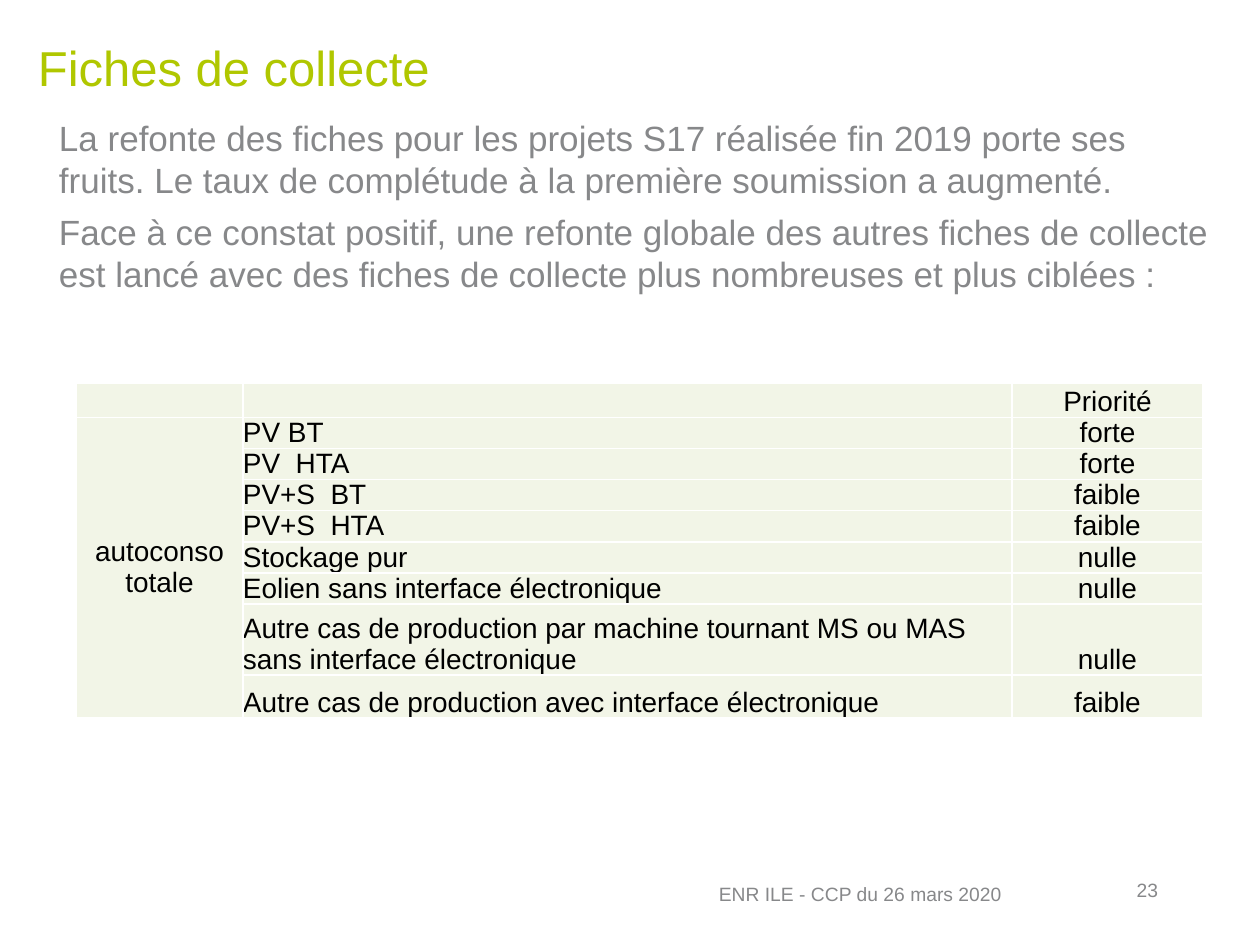
from dataclasses import dataclass

from lxml.etree import SubElement
from pptx import Presentation
from pptx.dml.color import RGBColor
from pptx.enum.text import MSO_ANCHOR, MSO_AUTO_SIZE, PP_ALIGN
from pptx.oxml.ns import qn
from pptx.util import Pt

EMU_PER_PX = 914400 / 126


def px(length):
    return round(length * EMU_PER_PX)


@dataclass(frozen=True)
class Theme:
    font: str = "Arial"
    title: str = "B0C700"
    grey: str = "87888A"
    ink: str = "000000"
    cell: str = "F2F5E7"
    border: str = "FFFFFF"
    title_size: int = 28
    body_size: int = 20
    table_size: int = 16
    small_size: int = 11


def assign(target, values):
    for name, value in values.items():
        setattr(target, name, value)


class SlideBuilder:
    def __init__(self, page, theme):
        self.page = page
        self.theme = theme

    def place(self, box, left, top, width, height):
        assign(box, dict(left=px(left), top=px(top), width=px(width), height=px(height)))

    def fill_text(self, frame, texts, size, color, align=PP_ALIGN.LEFT, after=0):
        assign(frame, dict(margin_left=0, margin_right=0, margin_top=0, margin_bottom=0,
                           word_wrap=True))
        for index, text in enumerate(texts):
            para = frame.paragraphs[0] if index == 0 else frame.add_paragraph()
            properties = para._p.get_or_add_pPr()
            assign(para, dict(alignment=align, space_before=Pt(0), space_after=Pt(after)))
            properties.set("marL", "0")
            properties.set("indent", "0")
            SubElement(properties, qn("a:buNone"))
            span = para.add_run()
            span.text = text
            assign(span.font, dict(name=self.theme.font, size=Pt(size)))
            span.font.color.rgb = RGBColor.from_string(color)

    def placeholder(self, index, area, texts, size, color, after=0):
        box = self.page.placeholders[index]
        self.place(box, *area)
        assign(box.text_frame, dict(auto_size=MSO_AUTO_SIZE.NONE, vertical_anchor=MSO_ANCHOR.TOP))
        self.fill_text(box.text_frame, texts, size, color, after=after)

    def footer(self, area, text):
        box = self.page.shapes.add_textbox(*map(px, area))
        self.fill_text(box.text_frame, [text], self.theme.small_size, self.theme.grey,
                       PP_ALIGN.RIGHT)

    def style_cell(self, cell):
        properties = cell._tc.get_or_add_tcPr()
        for side in ("lnL", "lnR", "lnT", "lnB"):
            line = SubElement(properties, qn(f"a:{side}"), w=str(int(Pt(1))))
            fill = SubElement(line, qn("a:solidFill"))
            SubElement(fill, qn("a:srgbClr"), val=self.theme.border)
        cell.fill.solid()
        cell.fill.fore_color.rgb = RGBColor.from_string(self.theme.cell)
        assign(cell, dict(margin_left=0, margin_right=0, margin_top=0, margin_bottom=0,
                          vertical_anchor=MSO_ANCHOR.BOTTOM))

    def table(self, left, top, widths, heights, rows):
        frame = self.page.shapes.add_table(len(rows), len(widths), px(left), px(top),
                                           px(sum(widths)), px(sum(heights)))
        table = frame.table
        for column, width in zip(table.columns, widths):
            column.width = px(width)
        for row, height in zip(table.rows, heights):
            row.height = px(height)
        for row, texts in zip(table.rows, rows):
            for index, (cell, text) in enumerate(zip(row.cells, texts)):
                self.style_cell(cell)
                if text:
                    align = PP_ALIGN.LEFT if index == 1 else PP_ALIGN.CENTER
                    self.fill_text(cell.text_frame, [text], self.theme.table_size,
                                   self.theme.ink, align)
                else:
                    para = cell.text_frame.paragraphs[0]
                    SubElement(para._p, qn("a:endParaRPr"), sz=str(self.theme.table_size * 100))
        return table


def main():
    deck = Presentation()
    assign(deck, dict(slide_width=px(1260), slide_height=px(945)))
    theme = Theme()
    slide = SlideBuilder(deck.slides.add_slide(deck.slide_layouts[1]), theme)

    slide.placeholder(0, (38, 37, 1183, 110), ["Fiches de collecte"], theme.title_size, theme.title)
    slide.placeholder(1, (59, 116, 1162, 359), [
        "La refonte des fiches pour les projets S17 réalisée fin 2019 porte ses fruits. "
        "Le taux de complétude à la première soumission a augmenté.",
        "Face à ce constat positif, une refonte globale des autres fiches de collecte "
        "est lancé avec des fiches de collecte plus nombreuses et plus ciblées :",
    ], theme.body_size, theme.grey, after=6)

    priorities = [
        ("PV BT", "forte"),
        ("PV  HTA", "forte"),
        ("PV+S  BT", "faible"),
        ("PV+S  HTA", "faible"),
        ("Stockage pur", "nulle"),
        ("Eolien sans interface électronique", "nulle"),
        ("Autre cas de production par machine tournant MS ou MAS sans interface électronique", "nulle"),
        ("Autre cas de production avec interface électronique", "faible"),
    ]
    rows = [("", "", "Priorité")] + [("", *entry) for entry in priorities]
    rows[1] = ("autoconso totale", *priorities[0])
    table = slide.table(76, 383, (167, 769, 191), (34, *[31] * 6, 71, 43), rows)
    group = table.cell(1, 0)
    group.merge(table.cell(len(priorities), 0))
    group.vertical_anchor = MSO_ANCHOR.MIDDLE

    slide.footer((558, 882, 444, 24), "ENR ILE - CCP du 26 mars 2020")
    slide.footer((1116, 878, 42, 29), "23")
    deck.save("out.pptx")


if __name__ == "__main__":
    main()
